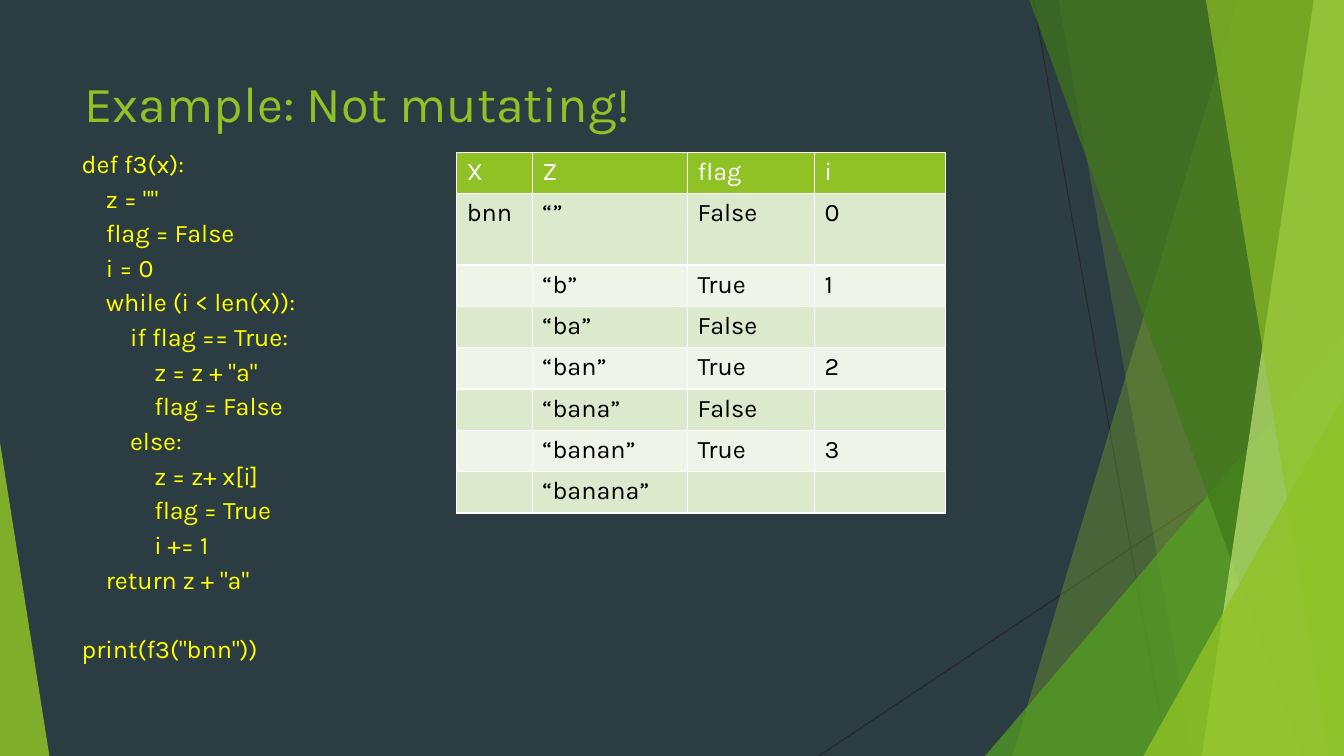
from lxml.etree import SubElement
from pptx import Presentation
from pptx.dml.color import RGBColor
from pptx.enum.shapes import MSO_CONNECTOR, MSO_SHAPE
from pptx.enum.text import MSO_ANCHOR, PP_ALIGN
from pptx.oxml.ns import qn
from pptx.util import Inches, Pt

FONT = "Karla"
LIME = "90C226"
CODE = [
    (0, "def f3(x):"),
    (1, 'z = ""'),
    (1, "flag = False"),
    (1, "i = 0"),
    (1, "while (i < len(x)):"),
    (2, "if flag == True:"),
    (3, 'z = z + "a"'),
    (3, "flag = False"),
    (2, "else:"),
    (3, "z = z+ x[i]"),
    (3, "flag = True"),
    (3, "i += 1"),
    (1, 'return z + "a"'),
    (0, 'print(f3("bnn"))'),
]
TRACE = [
    ("X", "Z", "flag", "i"),
    ("bnn", "“”", "False", "0"),
    ("", "“b”", "True", "1"),
    ("", "“ba”", "False", ""),
    ("", "“ban”", "True", "2"),
    ("", "“bana”", "False", ""),
    ("", "“banan”", "True", "3"),
    ("", "“banana”", "", ""),
]


def color(code):
    """Turn a hex string into a colour."""
    return RGBColor.from_string(code)


def paint(shape, code, alpha):
    """Fill a shape with a see-through colour and no outline."""
    shape.shadow.inherit = False
    shape.line.fill.background()
    shape.fill.solid()
    shape.fill.fore_color.rgb = color(code)
    tint = shape._element.spPr.find(".//" + qn("a:srgbClr"))
    SubElement(tint, qn("a:alpha"), val=str(alpha * 1000))


def write(para, text, size, code):
    """Add one run of styled text."""
    run = para.add_run()
    run.text = text
    run.font.name = FONT
    run.font.size = Pt(size)
    run.font.bold = False
    run.font.color.rgb = color(code)


def place(holder, box):
    """Move a placeholder to its box, above the shards."""
    holder.left, holder.top, holder.width, holder.height = map(Inches, box)
    holder._element.getparent().append(holder._element)
    frame = holder.text_frame
    frame.word_wrap = True
    frame.vertical_anchor = MSO_ANCHOR.TOP
    return frame


def add_line(slide, start, end):
    """Draw a thin dark line."""
    line = slide.shapes.add_connector(
        MSO_CONNECTOR.STRAIGHT, *map(Inches, start + end))
    line.line.color.rgb = color("262626")
    line.line.width = Pt(0.75)
    SubElement(line._element.spPr, qn("a:effectLst"))


def add_shard(slide, box, head, foot, code, alpha):
    """Draw a slanted band from head and foot to the right edge of the box."""
    left, top, width, height = box
    right, base = left + width, top + height
    spots = [(head, top), (right, top), (right, base), (foot, base)]
    spots = [(Inches(x), Inches(y)) for x, y in spots]
    form = slide.shapes.build_freeform(*spots[0])
    form.add_line_segments(spots[1:], close=True)
    paint(form.convert_to_shape(), code, alpha)


def add_wedge(slide, box, tip, code, alpha):
    """Draw a right triangle with its tip at the left (0) or right (1)."""
    wedge = slide.shapes.add_shape(
        MSO_SHAPE.ISOSCELES_TRIANGLE, *map(Inches, box))
    wedge.adjustments[0] = tip
    paint(wedge, code, alpha)


def add_decor(slide, box):
    """Draw the green shards along both edges of the box."""
    left, top, width, height = box
    right, base = left + width, top + height
    add_line(slide, (10.25, top), (11.58, base))
    add_line(slide, (right, 4.03), (8.12, base))
    add_shard(slide, box, 12.28, 10.04, LIME, 30)
    add_shard(slide, box, 10.5, 11.83, LIME, 20)
    add_wedge(slide, (right - 3.56, base - 4.17, 3.56, 4.17), 1, "54A021", 72)
    add_shard(slide, box, 10.21, 12.91, "3F7819", 70)
    add_shard(slide, box, 13.03, 11.92, "C0E474", 70)
    add_shard(slide, box, 11.96, 13.18, LIME, 65)
    add_wedge(slide, (right - 1.99, base - 3.57, 1.99, 3.57), 1, LIME, 80)
    add_wedge(slide, (left, base - 3.11, 0.49, 3.11), 0, LIME, 85)


def add_title(slide, box, text):
    """Fill the title."""
    para = place(slide.shapes.title, box).paragraphs[0]
    para.alignment = PP_ALIGN.LEFT
    write(para, text, 36, LIME)


def add_code(slide, box):
    """Fill the body with the code, indented by depth."""
    frame = place(slide.placeholders[1], box)
    last = len(CODE) - 1
    for row, (depth, text) in enumerate(CODE):
        para = frame.add_paragraph() if row else frame.paragraphs[0]
        para.line_spacing = 1.1
        para.space_before = Pt(26 if row == last else 1)
        props = para._p.get_or_add_pPr()
        props.set("marL", str(Inches(0.24 * depth)))
        props.set("indent", "0")
        SubElement(props, qn("a:buNone"))
        write(para, text, 18, "FFFF00")


def add_trace(slide, box):
    """Build the table of values at each step."""
    table = slide.shapes.add_table(
        len(TRACE), len(TRACE[0]), *map(Inches, box)).table
    for col, width in zip(table.columns, (0.75, 1.54, 1.26, 1.3)):
        col.width = Inches(width)
    for row, texts in enumerate(TRACE):
        table.rows[row].height = Inches(0.71 if row == 1 else 0.41)
        band = ("EEF4E8", "DBE9CD")[row % 2] if row else LIME
        for col, text in enumerate(texts):
            cell = table.cell(row, col)
            cell.fill.solid()
            cell.fill.fore_color.rgb = color(band)
            para = cell.text_frame.paragraphs[0]
            para.font.size = Pt(18)
            if text:
                write(para, text, 18, "000000" if row else "FFFFFF")


def main():
    """Build and save the slide."""
    deck = Presentation()
    deck.slide_width, deck.slide_height = Inches(13.33), Inches(7.5)
    slide = deck.slides.add_slide(deck.slide_layouts[1])
    slide.background.fill.solid()
    slide.background.fill.fore_color.rgb = color("2C3C43")
    add_decor(slide, (0, 0, 13.33, 7.5))
    add_title(slide, (0.74, 0.67, 9.4, 1.44), "Example: Not mutating!")
    add_code(slide, (0.71, 1.39, 10.29, 5.48))
    add_trace(slide, (4.53, 1.51, 4.85, 3.6))
    deck.save("out.pptx")


if __name__ == "__main__":
    main()
